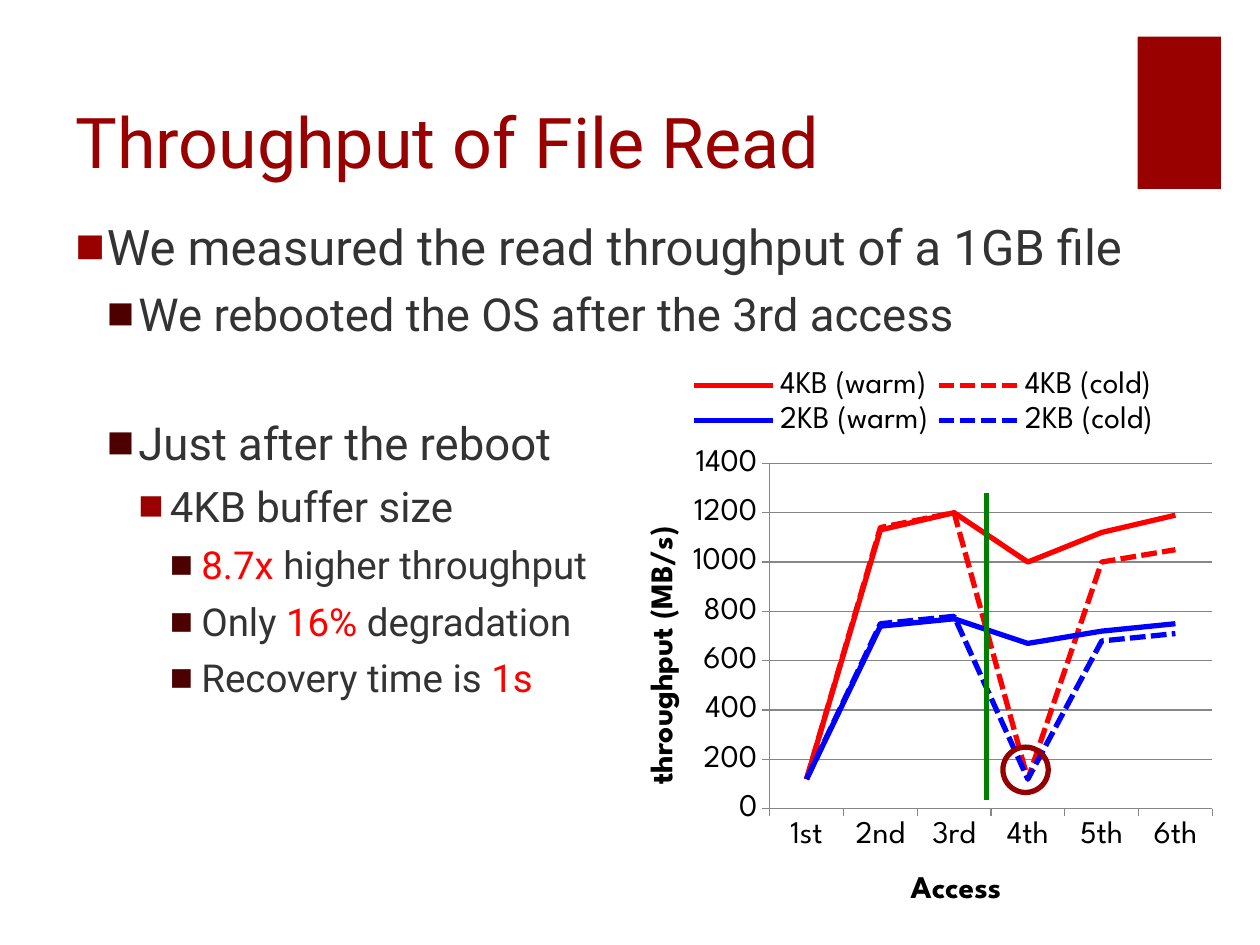
from dataclasses import dataclass

from lxml import etree
from pptx import Presentation
from pptx.chart.data import CategoryChartData
from pptx.dml.color import RGBColor
from pptx.enum.chart import XL_CHART_TYPE, XL_LEGEND_POSITION, XL_MARKER_STYLE, XL_TICK_MARK
from pptx.enum.dml import MSO_LINE
from pptx.enum.shapes import MSO_CONNECTOR, MSO_SHAPE
from pptx.enum.text import MSO_ANCHOR
from pptx.oxml.ns import qn
from pptx.util import Inches, Pt

LINE_CHART = XL_CHART_TYPE.LINE
LEGEND_TOP = XL_LEGEND_POSITION.TOP
NO_MARKER = XL_MARKER_STYLE.NONE
TICK_OUTSIDE = XL_TICK_MARK.OUTSIDE
DASHED = MSO_LINE.SQUARE_DOT
STRAIGHT = MSO_CONNECTOR.STRAIGHT
RECTANGLE, OVAL = MSO_SHAPE.RECTANGLE, MSO_SHAPE.OVAL
ANCHOR_TOP, ANCHOR_BOTTOM = MSO_ANCHOR.TOP, MSO_ANCHOR.BOTTOM


@dataclass(frozen=True)
class Theme:
    accent: str = "990000"
    accent_dark: str = "4D0000"
    text: str = "333333"
    highlight: str = "FF0000"
    chart_text: str = "000000"
    grid: str = "868686"
    warm_4kb: str = "FF0000"
    warm_2kb: str = "0000FF"
    reboot: str = "008000"
    circle: str = "960000"
    font: str = "Roboto"
    chart_font: str = "League Spartan"
    title_size: int = 40
    level_sizes: tuple = (28, 26, 24, 22)
    chart_size: int = 18
    line_width: int = 3


THEME = Theme()

# Level, space before in points, runs of (text, is highlighted)
BODY = [
    (0, 18, [("We measured the read throughput of a 1GB file", False)]),
    (1, 6, [("We rebooted the OS after the 3rd access", False)]),
    (1, 42.5, [("Just after the reboot", False)]),
    (2, 6, [("4KB buffer size", False)]),
    (3, 6, [("8.7x", True), (" higher throughput", False)]),
    (3, 6, [("Only ", False), ("16%", True), (" degradation", False)]),
    (3, 6, [("Recovery time is ", False), ("1s", True)]),
]

ACCESSES = ["1st", "2nd", "3rd", "4th", "5th", "6th"]
# Name, values, colour, is dashed
SERIES = [
    ("4KB (warm)", [120, 1130, 1200, 1000, 1120, 1190], THEME.warm_4kb, False),
    ("4KB (cold)", [120, 1140, 1200, 120, 1000, 1050], THEME.warm_4kb, True),
    ("2KB (warm)", [120, 740, 770, 670, 720, 750], THEME.warm_2kb, False),
    ("2KB (cold)", [120, 750, 780, 120, 680, 710], THEME.warm_2kb, True),
]


def rgb(value):
    return RGBColor.from_string(value)


def format_font(font, *, size, color, name, bold=False):
    font.size = Pt(size)
    font.color.rgb = rgb(color)
    font.name = name
    font.bold = bold


def add_text(paragraph, text, **style):
    run = paragraph.add_run()
    run.text = text
    format_font(run.font, **style)


def add_text_frame(slide, left, top, width, height, anchor=ANCHOR_TOP):
    box = slide.shapes.add_textbox(Inches(left), Inches(top), Inches(width), Inches(height))
    frame = box.text_frame
    frame.word_wrap = True
    frame.vertical_anchor = anchor
    return frame


def set_bullet(paragraph, level, color):
    properties = paragraph._p.get_or_add_pPr()
    properties.set("marL", str(Inches(0.25 * (level + 1))))
    properties.set("indent", str(Inches(-0.25)))
    bullet_color = etree.SubElement(properties, qn("a:buClr"))
    etree.SubElement(bullet_color, qn("a:srgbClr"), val=color)
    etree.SubElement(properties, qn("a:buFont"), typeface="Arial")
    etree.SubElement(properties, qn("a:buChar"), char="■")


def add_body(slide):
    frame = add_text_frame(slide, 0.5, 1.67, 8.92, 5.28)
    for index, (level, space_before, runs) in enumerate(BODY):
        paragraph = frame.add_paragraph() if index else frame.paragraphs[0]
        paragraph.level = level
        paragraph.space_before = Pt(space_before)
        set_bullet(paragraph, level, THEME.accent_dark if level % 2 else THEME.accent)
        for text, highlighted in runs:
            add_text(paragraph, text, size=THEME.level_sizes[level], name=THEME.font,
                     color=THEME.highlight if highlighted else THEME.text)


def add_shape(slide, kind, left, top, width, height, *, fill=None, line=None):
    shape = slide.shapes.add_shape(kind, Inches(left), Inches(top), Inches(width), Inches(height))
    shape.shadow.inherit = False
    if fill:
        shape.fill.solid()
        shape.fill.fore_color.rgb = rgb(fill)
    else:
        shape.fill.background()
    if line:
        shape.line.color.rgb = rgb(line)
        shape.line.width = Pt(THEME.line_width)
    else:
        shape.line.fill.background()


def add_line(slide, start, end, color):
    points = [Inches(value) for value in (*start, *end)]
    connector = slide.shapes.add_connector(STRAIGHT, *points)
    connector.line.color.rgb = rgb(color)
    connector.line.width = Pt(THEME.line_width)
    etree.SubElement(connector._element.spPr, qn("a:effectLst"))


def set_layout(element, index, inner=False, **fractions):
    """Place a chart part by fractions of the chart's size."""
    for old_layout in element.findall(qn("c:layout")):
        element.remove(old_layout)
    layout = etree.Element(qn("c:layout"))
    manual = etree.SubElement(layout, qn("c:manualLayout"))
    if inner:
        etree.SubElement(manual, qn("c:layoutTarget"), val="inner")
    for mode in ("xMode", "yMode"):
        etree.SubElement(manual, qn(f"c:{mode}"), val="edge")
    for name, value in fractions.items():
        etree.SubElement(manual, qn(f"c:{name}"), val=str(value))
    element.insert(index, layout)


def format_axis(axis, title, x, y):
    style = dict(size=THEME.chart_size, color=THEME.chart_text, name=THEME.chart_font)
    axis.major_tick_mark = TICK_OUTSIDE
    axis.format.line.color.rgb = rgb(THEME.grid)
    format_font(axis.tick_labels.font, **style)
    add_text(axis.axis_title.text_frame.paragraphs[0], title, bold=True, **style)
    set_layout(axis.axis_title._element, 1, x=x, y=y)


def add_throughput_chart(slide):
    data = CategoryChartData()
    data.categories = ACCESSES
    for name, values, _, _ in SERIES:
        data.add_series(name, values)
    frame = slide.shapes.add_chart(LINE_CHART, Inches(4.84), Inches(2.81),
                                   Inches(4.88), Inches(4.57), data)
    chart = frame.chart
    chart.has_title = False
    format_font(chart.font, size=THEME.chart_size, color=THEME.chart_text, name=THEME.chart_font)
    chart.plots[0].vary_by_categories = False

    # Series lines
    for series, (_, _, color, dashed) in zip(chart.plots[0].series, SERIES):
        series.smooth = False
        series.marker.style = NO_MARKER
        series.format.line.color.rgb = rgb(color)
        series.format.line.width = Pt(THEME.line_width)
        if dashed:
            series.format.line.dash_style = DASHED

    # Axes
    format_axis(chart.category_axis, "Access", 0.48, 0.89)
    value_axis = chart.value_axis
    format_axis(value_axis, "throughput (MB/s)", 0.05, 0.29)
    value_axis.minimum_scale, value_axis.maximum_scale = 0, 1400
    value_axis.major_unit = 200
    value_axis.major_gridlines.format.line.color.rgb = rgb(THEME.grid)

    # Legend and plot area
    chart.has_legend = True
    chart.legend.position = LEGEND_TOP
    chart.legend.include_in_layout = False
    set_layout(chart.legend._element, 1, x=0.12, y=0.02, w=0.78, h=0.13)
    set_layout(chart._chartSpace.chart.plotArea, 0, inner=True, x=0.26, y=0.19, w=0.72, h=0.6)


def main():
    presentation = Presentation()
    presentation.slide_width, presentation.slide_height = Inches(10), Inches(7.5)
    slide = presentation.slides.add_slide(presentation.slide_layouts[6])

    # Corner block, title and body
    add_shape(slide, RECTANGLE, 9.03, 0.29, 0.66, 1.21, fill=THEME.accent)
    title = add_text_frame(slide, 0.5, 0.25, 8.42, 1.25, ANCHOR_BOTTOM)
    add_text(title.paragraphs[0], "Throughput of File Read", size=THEME.title_size,
             color=THEME.accent, name=THEME.font)
    add_body(slide)

    # Chart with the reboot line and the circled drop
    add_throughput_chart(slide)
    add_line(slide, (7.83, 3.91), (7.83, 6.35), THEME.reboot)
    add_shape(slide, OVAL, 7.96, 5.93, 0.36, 0.36, line=THEME.circle)
    presentation.save("out.pptx")


if __name__ == "__main__":
    main()
